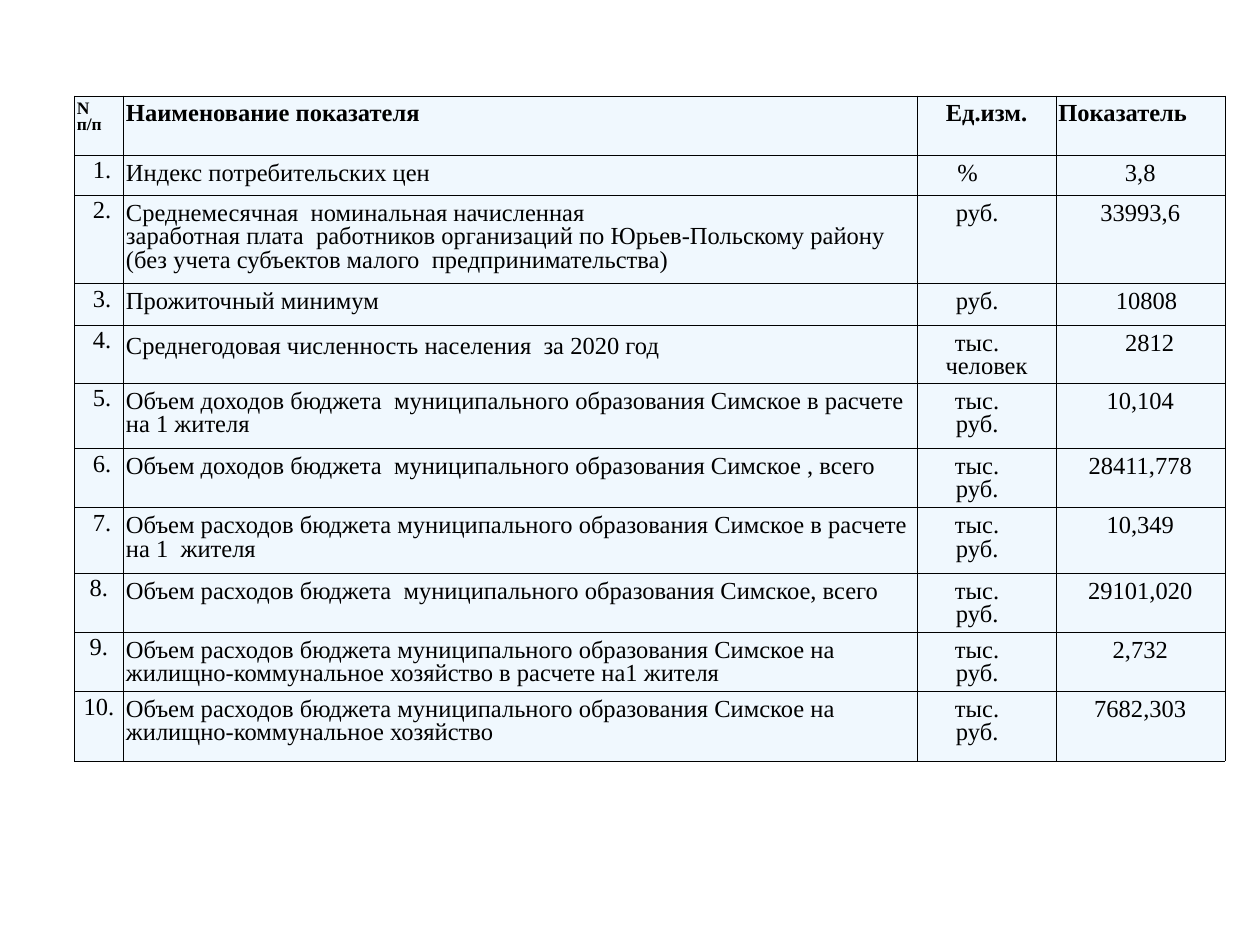
from lxml.etree import SubElement
from pptx import Presentation
from pptx.dml.color import RGBColor
from pptx.enum.text import PP_ALIGN
from pptx.oxml import parse_xml
from pptx.oxml.ns import nsdecls, qn
from pptx.util import Inches, Pt

INK = "000000"
PALE = "F0F8FE"
SPACE = 0.05
COLS = [0.39, 6.3, 1.1, 1.34]
ROWS = [0.47, 0.32, 0.7, 0.33, 0.46, 0.52, 0.47, 0.52, 0.47, 0.47, 0.55]
HEAD = ["N\nп/п", "Наименование показателя", "Ед.изм.", "Показатель"]
RUB = "тыс.\nруб."
ITEMS = [
    ("Индекс потребительских цен", "%", "3,8"),
    ("Среднемесячная  номинальная начисленная\nзаработная плата  работников организаций "
     "по Юрьев-Польскому району (без учета субъектов малого  предпринимательства)",
     "руб.", "33993,6"),
    ("Прожиточный минимум", "руб.", "10808"),
    ("Среднегодовая численность населения  за 2020 год", "тыс.\nчеловек", "2812"),
    ("Объем доходов бюджета  муниципального образования Симское в расчете на 1 жителя",
     RUB, "10,104"),
    ("Объем доходов бюджета  муниципального образования Симское , всего",
     RUB, "28411,778"),
    ("Объем расходов бюджета муниципального образования Симское в расчете на 1  жителя",
     RUB, "10,349"),
    ("Объем расходов бюджета  муниципального образования Симское, всего",
     RUB, "29101,020"),
    ("Объем расходов бюджета муниципального образования Симское на "
     "жилищно-коммунальное хозяйство в расчете на1 жителя", RUB, "2,732"),
    ("Объем расходов бюджета муниципального образования Симское на "
     "жилищно-коммунальное хозяйство", RUB, "7682,303"),
]
LEFT = {"alignment": PP_ALIGN.LEFT, "line_spacing": 0.86}
MID = {"alignment": PP_ALIGN.CENTER, "line_spacing": 0.86}
LOOSE = {"alignment": PP_ALIGN.LEFT, "line_spacing": 1.0}
BODY = {"name": "Times New Roman", "size": Pt(14), "bold": False}
BOLD = {**BODY, "bold": True}
SMALL = {**BOLD, "size": Pt(10)}


def color(value):
    return RGBColor.from_string(value)


def apply(target, style):
    for key, value in style.items():
        setattr(target, key, value)


def border(cell):
    props = cell._tc.get_or_add_tcPr()
    for index, side in enumerate(["lnL", "lnR", "lnT", "lnB"]):
        line = parse_xml(f'<a:{side} {nsdecls("a")} w="{Pt(0.11)}"/>')
        fill = SubElement(line, qn("a:solidFill"))
        SubElement(fill, qn("a:srgbClr"), val=INK)
        props.insert(index, line)


def write(cell, text, para, font, top=0.06, before=0, after=0):
    apply(cell, {
        "margin_left": Inches(0.02 + before * SPACE),
        "margin_right": Inches(0.02 + after * SPACE),
        "margin_top": Inches(top),
        "margin_bottom": 0,
    })
    cell.fill.solid()
    cell.fill.fore_color.rgb = color(PALE)
    border(cell)
    frame = cell.text_frame
    for index, line in enumerate(text.split("\n")):
        item = frame.add_paragraph() if index else frame.paragraphs[0]
        apply(item, para)
        run = item.add_run()
        run.text = line
        apply(run.font, font)
        run.font.color.rgb = color(INK)


def indent(item, width):
    props = item._p.get_or_add_pPr()
    props.set("marL", str(Inches(width)))
    props.set("indent", "0")


def make_table(slide):
    frame = slide.shapes.add_table(len(ROWS), len(COLS), Inches(0.59), Inches(0.76),
                                   Inches(sum(COLS)), Inches(sum(ROWS)))
    table = frame.table
    apply(table, {"first_row": False, "horz_banding": False})
    for col, width in zip(table.columns, COLS):
        col.width = Inches(width)
    for row, height in zip(table.rows, ROWS):
        row.height = Inches(height)
    return table


def add_head(table):
    for col, text in enumerate(HEAD):
        write(table.cell(0, col), text, MID if col == 2 else LEFT,
              BOLD if col else SMALL, 0.06 if col else 0.04)


def add_item(table, row, name, unit, value):
    number, title, measure, amount = (table.cell(row, col) for col in range(4))
    write(number, f"{row}.", MID, BODY, 0.04, before=int(row < 8))
    write(title, name, LOOSE if row == 4 else LEFT, BODY)
    write(measure, unit, MID, BODY, after=6 if unit == "%" else 3)
    write(amount, value, MID, BODY, before={3: 2, 4: 3}.get(row, 0))
    if row == 4:
        indent(measure.text_frame.paragraphs[1], 3 * SPACE)


def main():
    deck = Presentation()
    deck.slide_width, deck.slide_height = Inches(10), Inches(7.5)
    slide = deck.slides.add_slide(deck.slide_layouts[6])
    table = make_table(slide)
    add_head(table)
    for row, item in enumerate(ITEMS, 1):
        add_item(table, row, *item)
    deck.save("out.pptx")


if __name__ == "__main__":
    main()
